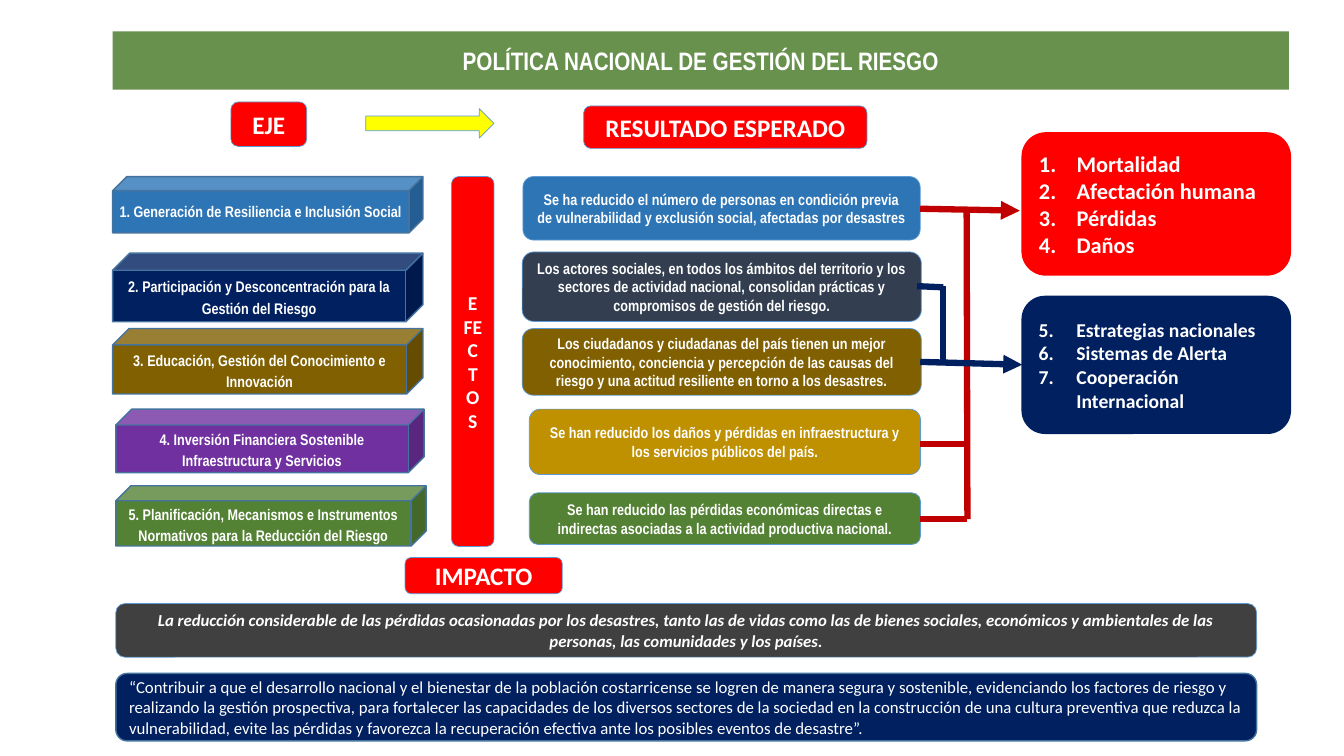
from dataclasses import dataclass

from lxml import etree
from pptx import Presentation
from pptx import util as u
from pptx.dml.color import RGBColor
from pptx.enum import shapes, text
from pptx.oxml.ns import qn

COLORS = {
    "white": "FFFFFF", "red": "FF0000", "crimson": "C00000", "yellow": "FFFF00",
    "blue": "2E75B6", "navy": "002060", "slate": "333F50", "olive": "806000",
    "gold": "BF9000", "purple": "7030A0", "green": "548235", "gray": "404040",
    "sky": "5B9BD5", "steel": "43739E",
}
NARROW, SANS = "Arial Narrow", "Calibri"
MSO = shapes.MSO_SHAPE
CENTER, LEFT = text.PP_ALIGN.CENTER, text.PP_ALIGN.LEFT


@dataclass
class Box:
    """A filled shape with text; lengths in centimetres."""
    x: float
    y: float
    w: float
    h: float
    fill: str
    text: str = ""
    size: float = 11
    font: str = NARROW
    bold: bool = True
    italic: bool = False
    kind: int = MSO.ROUNDED_RECTANGLE
    line: str = "sky"
    line_w: float = 0.5
    align: int = CENTER
    spacing: float = 1.0
    tight: bool = False
    start: int = 0  # first number of a numbered list


@dataclass
class Link:
    """A thick connector; lengths in centimetres."""
    x1: float
    y1: float
    x2: float
    y2: float
    color: str
    arrow: bool = False


def rgb(name: str) -> RGBColor:
    return RGBColor.from_string(COLORS[name])


def write(tf, box: Box) -> None:
    tf.word_wrap = True
    tf.auto_size = text.MSO_AUTO_SIZE.NONE
    tf.vertical_anchor = text.MSO_ANCHOR.MIDDLE
    if box.tight:
        tf.margin_left = tf.margin_right = u.Cm(0.16)
        tf.margin_top = tf.margin_bottom = u.Cm(0.08)
    tf.text = box.text
    for p in tf.paragraphs:
        p.alignment = box.align
        p.line_spacing = box.spacing
        if box.start:
            pPr = p._p.get_or_add_pPr()
            pPr.set("marL", str(u.Cm(0.95)))
            pPr.set("indent", str(-u.Cm(0.95)))
            etree.SubElement(pPr, qn("a:buFont"), typeface="+mj-lt")
            etree.SubElement(pPr, qn("a:buAutoNum"), type="arabicPeriod",
                             startAt=str(box.start))
        for r in p.runs:
            r.font.name, r.font.size = box.font, u.Pt(box.size)
            r.font.bold, r.font.italic = box.bold, box.italic
            r.font.color.rgb = rgb("white")


def draw_box(s, box: Box) -> None:
    sp = s.shapes.add_shape(box.kind, *map(u.Cm, (box.x, box.y, box.w, box.h)))
    sp.shadow.inherit = False
    sp.fill.solid()
    sp.fill.fore_color.rgb = rgb(box.fill)
    sp.line.color.rgb = rgb(box.line)
    sp.line.width = u.Pt(box.line_w)
    if box.text:
        write(sp.text_frame, box)


def draw_title(s, box: Box) -> None:
    sp = s.shapes.title
    sp.left, sp.top, sp.width, sp.height = map(u.Cm, (box.x, box.y, box.w, box.h))
    geom = etree.SubElement(sp._element.spPr, qn("a:prstGeom"), prst="roundRect")
    etree.SubElement(geom, qn("a:avLst"))
    sp.fill.solid()
    sp.fill.fore_color.rgb = rgb(box.fill)
    tint = sp._element.spPr.find(".//" + qn("a:srgbClr"))
    etree.SubElement(tint, qn("a:alpha"), val="88000")
    sp.line.fill.background()
    write(sp.text_frame, box)


def draw_link(s, link: Link) -> None:
    ends = map(u.Cm, (link.x1, link.y1, link.x2, link.y2))
    cn = s.shapes.add_connector(shapes.MSO_CONNECTOR.STRAIGHT, *ends)
    cn.line.color.rgb = rgb(link.color)
    cn.line.width = u.Pt(4.5)
    if link.arrow:
        etree.SubElement(cn.line._get_or_add_ln(), qn("a:tailEnd"), type="triangle")
    etree.SubElement(cn._element.spPr, qn("a:effectLst"))


def axis(x: float, y: float, w: float, h: float, fill: str, label: str,
         spacing: float = 1.15) -> Box:
    return Box(x, y, w, h, fill, label, kind=MSO.CUBE, line="steel", line_w=1,
               spacing=spacing, tight=True)


def heading(x: float, y: float, w: float, h: float, label: str, size: float = 18) -> Box:
    return Box(x, y, w, h, "red", label, size, SANS)


def effects(y: float, h: float, fill: str, size: float, start: int,
            items: list[str]) -> Box:
    return Box(25.76, y, 6.76, h, fill, "\n".join(items), size, SANS, line=fill,
               line_w=1, align=LEFT, start=start)


TITLE = Box(2.84, 0.79, 29.64, 1.47, "green",
            "POLÍTICA NACIONAL DE GESTIÓN DEL RIESGO", 18, tight=True)

BOXES = [
    # Policy axes
    axis(2.84, 4.45, 7.82, 1.42, "blue",
         "1. Generación de Resiliencia e Inclusión Social", 1.0),
    axis(2.84, 6.38, 7.82, 1.73, "navy",
         "2. Participación y Desconcentración para la Gestión del Riesgo"),
    axis(2.84, 8.28, 7.82, 1.65, "olive",
         "3. Educación, Gestión del Conocimiento e Innovación"),
    axis(2.92, 10.31, 7.77, 1.6, "purple",
         "4. Inversión Financiera Sostenible Infraestructura y Servicios"),
    axis(2.92, 12.24, 7.82, 1.52, "green",
         "5. Planificación, Mecanismos e Instrumentos Normativos para la "
         "Reducción del Riesgo"),
    # Headings
    heading(5.82, 2.57, 1.91, 1.12, "EJE"),
    heading(14.71, 2.67, 7.14, 1.07, "RESULTADO ESPERADO"),
    heading(11.38, 4.45, 1.07, 9.32, "EFECTOS", 14),
    heading(10.21, 14.05, 3.96, 0.91, "IMPACTO"),
    Box(9.22, 2.74, 3.23, 0.74, "yellow", kind=MSO.RIGHT_ARROW),
    # Expected results
    Box(13.18, 4.45, 10.01, 1.6, "blue",
        "Se ha reducido el número de personas en condición previa de "
        "vulnerabilidad y exclusión social, afectadas por desastres"),
    Box(13.16, 6.35, 10.06, 1.75, "slate",
        "Los actores sociales, en todos los ámbitos del territorio y los sectores de "
        "actividad nacional, consolidan prácticas y compromisos de gestión del riesgo."),
    Box(13.16, 8.28, 10.06, 1.68, "olive",
        "Los ciudadanos y ciudadanas del país tienen un mejor conocimiento, conciencia "
        "y percepción de las causas del riesgo y una actitud resiliente en torno a los "
        "desastres."),
    Box(13.34, 10.31, 9.86, 1.65, "gold",
        "Se han reducido los daños y pérdidas en infraestructura y los servicios "
        "públicos del país."),
    Box(13.34, 12.42, 9.86, 1.3, "green",
        "Se han reducido las pérdidas económicas directas e indirectas asociadas a la "
        "actividad productiva nacional."),
    # Numbered effects
    effects(3.35, 3.58, "red", 16, 1,
            ["Mortalidad", "Afectación humana", "Pérdidas", "Daños"]),
    effects(7.47, 3.45, "navy", 14, 5,
            ["Estrategias nacionales", "Sistemas de Alerta", "Cooperación Internacional"]),
    # Impact statements
    Box(2.92, 15.21, 28.75, 1.35, "gray",
        "La reducción considerable de las pérdidas ocasionadas por los desastres, tanto "
        "las de vidas como las de bienes sociales, económicos y ambientales de las "
        "personas, las comunidades y los países.", 12, SANS, italic=True),
    Box(2.92, 16.97, 28.75, 1.7, "navy",
        "“Contribuir a que el desarrollo nacional y el bienestar de la población "
        "costarricense se logren de manera segura y sostenible, evidenciando los factores "
        "de riesgo y realizando la gestión prospectiva, para fortalecer las capacidades de "
        "los diversos sectores de la sociedad en la construcción de una cultura preventiva "
        "que reduzca la vulnerabilidad, evite las pérdidas y favorezca la recuperación "
        "efectiva ante los posibles eventos de desastre”.", 12, SANS, bold=False,
        line="steel", line_w=1, align=LEFT),
]

LINKS = [
    # Results 1, 4 and 5 to the first list
    Link(23.19, 11.18, 24.38, 11.18, "crimson"),
    Link(23.19, 13.08, 24.38, 13.08, "crimson"),
    Link(24.36, 5.28, 24.38, 13.08, "crimson"),
    Link(23.19, 5.26, 25.7, 5.31, "crimson", arrow=True),
    # Results 2 and 3 to the second list
    Link(23.11, 7.21, 23.77, 7.24, "navy"),
    Link(23.77, 7.21, 23.77, 9.12, "navy"),
    Link(23.19, 9.12, 25.76, 9.19, "navy", arrow=True),
]


def main() -> None:
    prs = Presentation()
    prs.slide_width, prs.slide_height = u.Cm(33.87), u.Cm(19.05)
    s = prs.slides.add_slide(prs.slide_layouts[5])
    draw_title(s, TITLE)
    for box in BOXES:
        draw_box(s, box)
    for link in LINKS:
        draw_link(s, link)
    prs.save("out.pptx")


if __name__ == "__main__":
    main()
